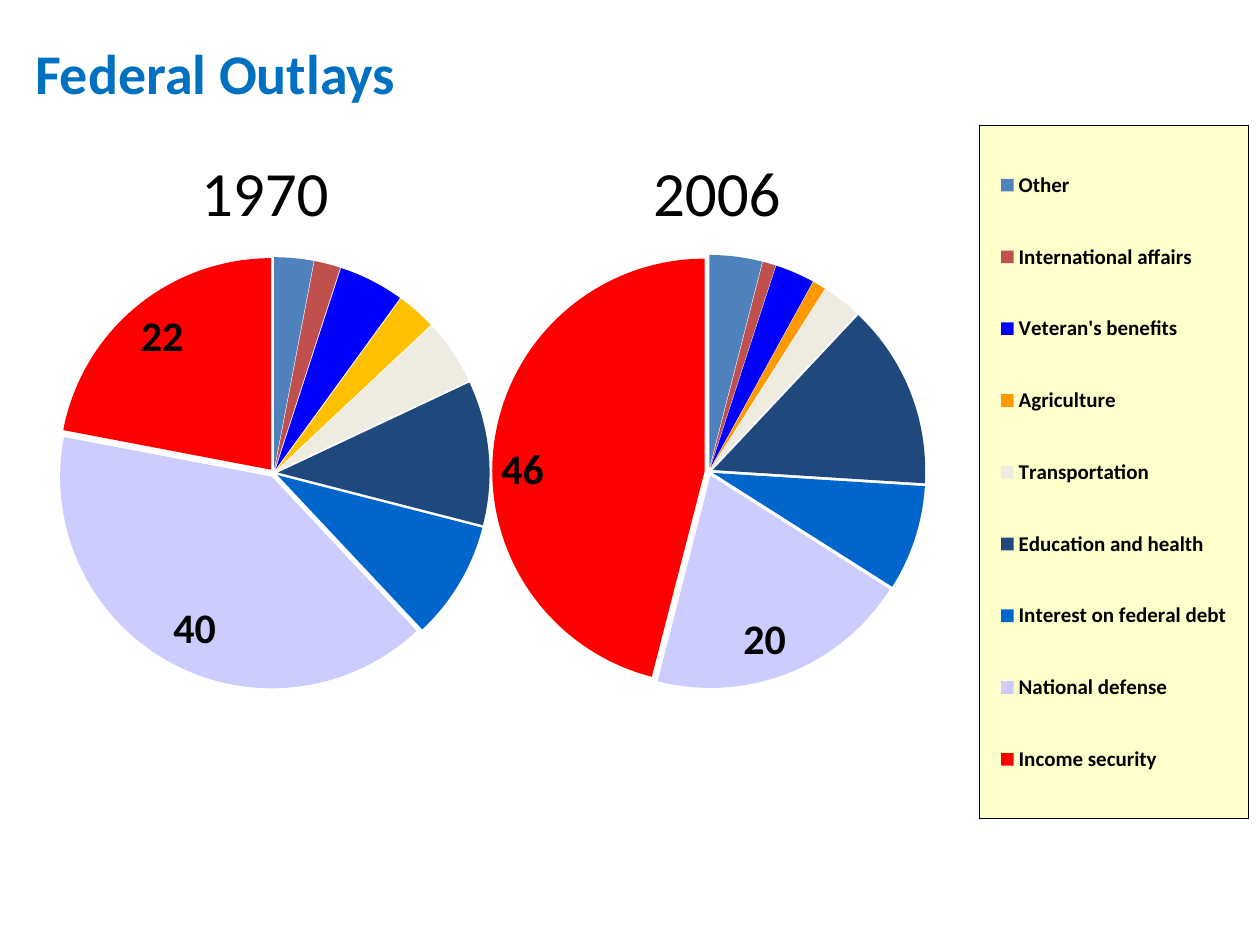
from lxml import etree
from pptx import Presentation
from pptx import util as u
from pptx.chart.data import CategoryChartData
from pptx.dml.color import RGBColor
from pptx.enum import chart as ch, text
from pptx.oxml import parse_xml
from pptx.oxml.ns import nsdecls, qn

PX = 914400 // 126
NAMES = ["Other", "International affairs", "Veteran's benefits", "Agriculture",
         "Transportation", "Education and health", "Interest on federal debt",
         "National defense", "Income security"]
HUES = ["4F81BD", "C0504D", "0000FF", "FF9900", "EEECE1", "1F497D", "0066CC",
        "CCCCFF", "FF0000"]
BIG = (7, 8)  # slices that carry a value


def rgb(hue):
    return RGBColor.from_string(hue)


def emu(box):
    return [u.Emu(n * PX) for n in box]


def style(font, size, hue="000000", bold=False):
    font.name = "Calibri"
    font.size = u.Pt(size)
    font.bold = bold
    font.color.rgb = rgb(hue)


def label(slide, box, words, size, hue="000000", bold=False):
    frame = slide.shapes.add_textbox(*emu(box)).text_frame
    frame.word_wrap = False
    para = frame.paragraphs[0]
    para.text = words
    para.alignment = text.PP_ALIGN.CENTER
    style(para.font, size, hue, bold)


def layout(box, part, inner=False):
    """Manual chart layout for a part, whose px are relative to the chart box."""
    spans = (box[2], box[3]) * 2
    target = '<c:layoutTarget val="inner"/>' if inner else ""
    modes = "".join(f'<c:{k}Mode val="edge"/>' for k in "xy")
    sizes = "".join(f'<c:{k} val="{n / span:.3f}"/>'
                    for k, n, span in zip("xywh", part, spans))
    return parse_xml(f'<c:layout {nsdecls("c")}><c:manualLayout>{target}{modes}'
                     f'{sizes}</c:manualLayout></c:layout>')


def drop(node, tag):
    for old in node.findall(qn(tag)):
        node.remove(old)


def paint(fill, line=""):
    return parse_xml(f'<c:spPr {nsdecls("c", "a")}>{fill}<a:ln>'
                     f'{line or "<a:noFill/>"}</a:ln></c:spPr>')


def solid(hue):
    return f'<a:solidFill><a:srgbClr val="{hue}"/></a:solidFill>'


def pie(slide, box, plot, names, vals, hues):
    data = CategoryChartData()
    data.categories = names
    data.add_series("Series 1", vals)
    chart = slide.shapes.add_chart(ch.XL_CHART_TYPE.PIE, *emu(box), data).chart
    chart.has_title = chart.has_legend = False
    style(chart.font, 24, bold=True)
    root = chart._chartSpace
    root.find(qn("c:chart")).addnext(paint("<a:noFill/>"))
    area = root.find(".//" + qn("c:plotArea"))
    drop(area, "c:layout")
    area.insert(0, layout(box, plot, inner=True))

    series = chart.plots[0].series[0]
    gap = etree.Element(qn("c:explosion"), val="2")
    series._element.find(qn("c:tx")).addnext(gap)
    for i, hue in enumerate(hues):
        fill = series.points[i].format.fill
        fill.solid()
        fill.fore_color.rgb = rgb(hue)
    series.data_labels.show_value = False
    for i in BIG:
        tag = series.points[i].data_label
        style(tag.font, 24, bold=True)
        tag.position = ch.XL_LABEL_POSITION.INSIDE_END
    return chart


def legend(chart, box, part):
    chart.has_legend = True
    key = chart.legend
    key.position = ch.XL_LEGEND_POSITION.RIGHT
    key.include_in_layout = True
    style(key.font, 12, bold=True)
    node = key._element
    drop(node, "c:layout")
    node.find(qn("c:legendPos")).addnext(layout(box, part))
    node.find(qn("c:overlay")).addnext(paint(solid("FFFFCC"), solid("000000")))


def main():
    deck = Presentation()
    deck.slide_width, deck.slide_height = u.Inches(10), u.Inches(7.5)
    slide = deck.slides.add_slide(deck.slide_layouts[6])
    label(slide, (21, 32, 389, 74), "Federal Outlays", 32, "0070C0", True)

    late = (465, 118, 801, 716)
    chart = pie(slide, late, (27, 137, 433, 434), NAMES,
                (4, 1, 3, 1, 3, 14, 8, 20, 46), HUES)
    legend(chart, late, (514, 8, 269, 693))
    pie(slide, (4, 130, 514, 648), (54, 127, 432, 432),
        [str(n + 1) for n in range(len(NAMES))],
        (3, 2, 5, 3, 5, 11, 9, 40, 22), HUES[:3] + ["FFC000"] + HUES[4:])

    label(slide, (188, 147, 154, 82), "1970", 36)
    label(slide, (640, 147, 154, 82), "2006", 36)
    deck.save("out.pptx")


if __name__ == "__main__":
    main()
